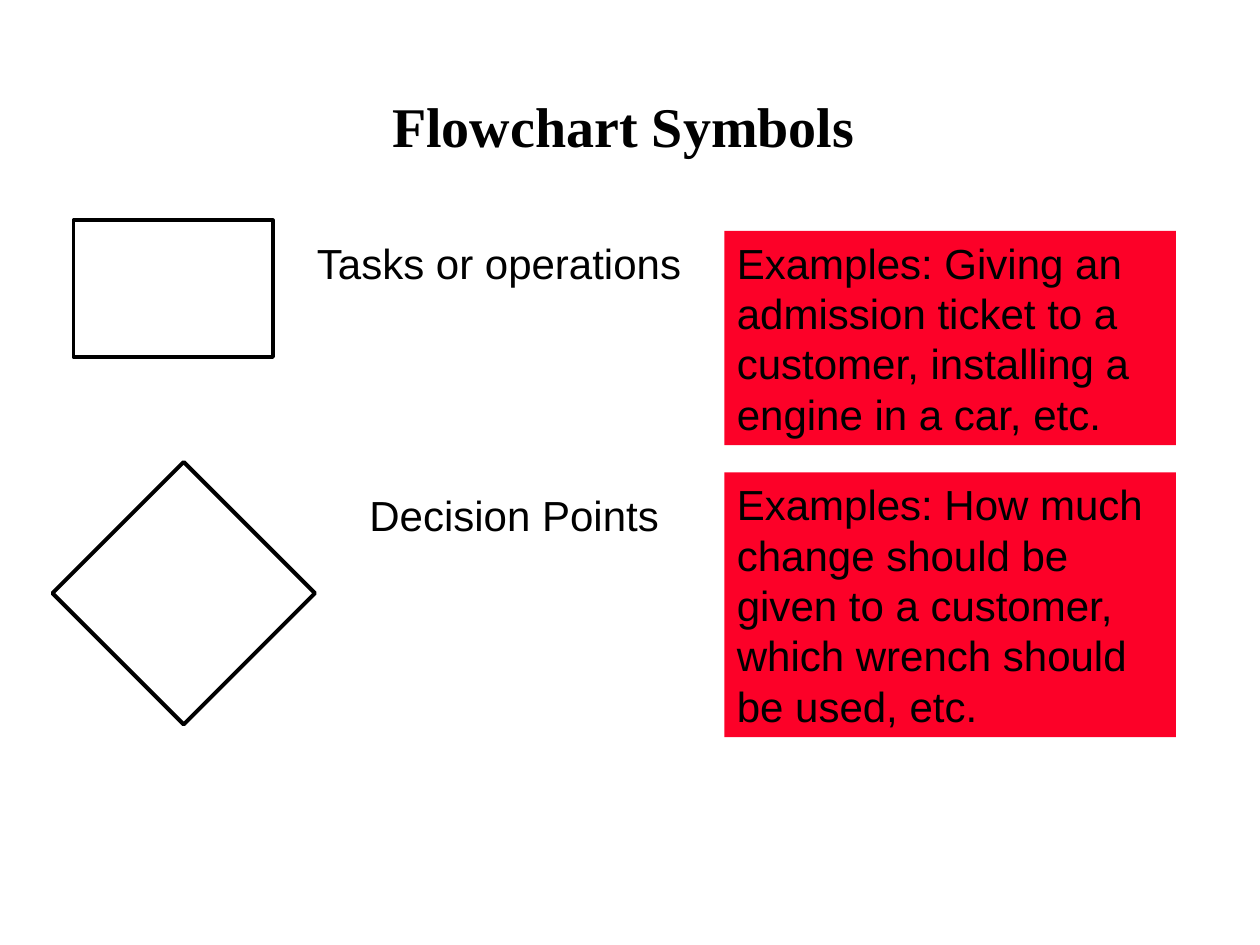
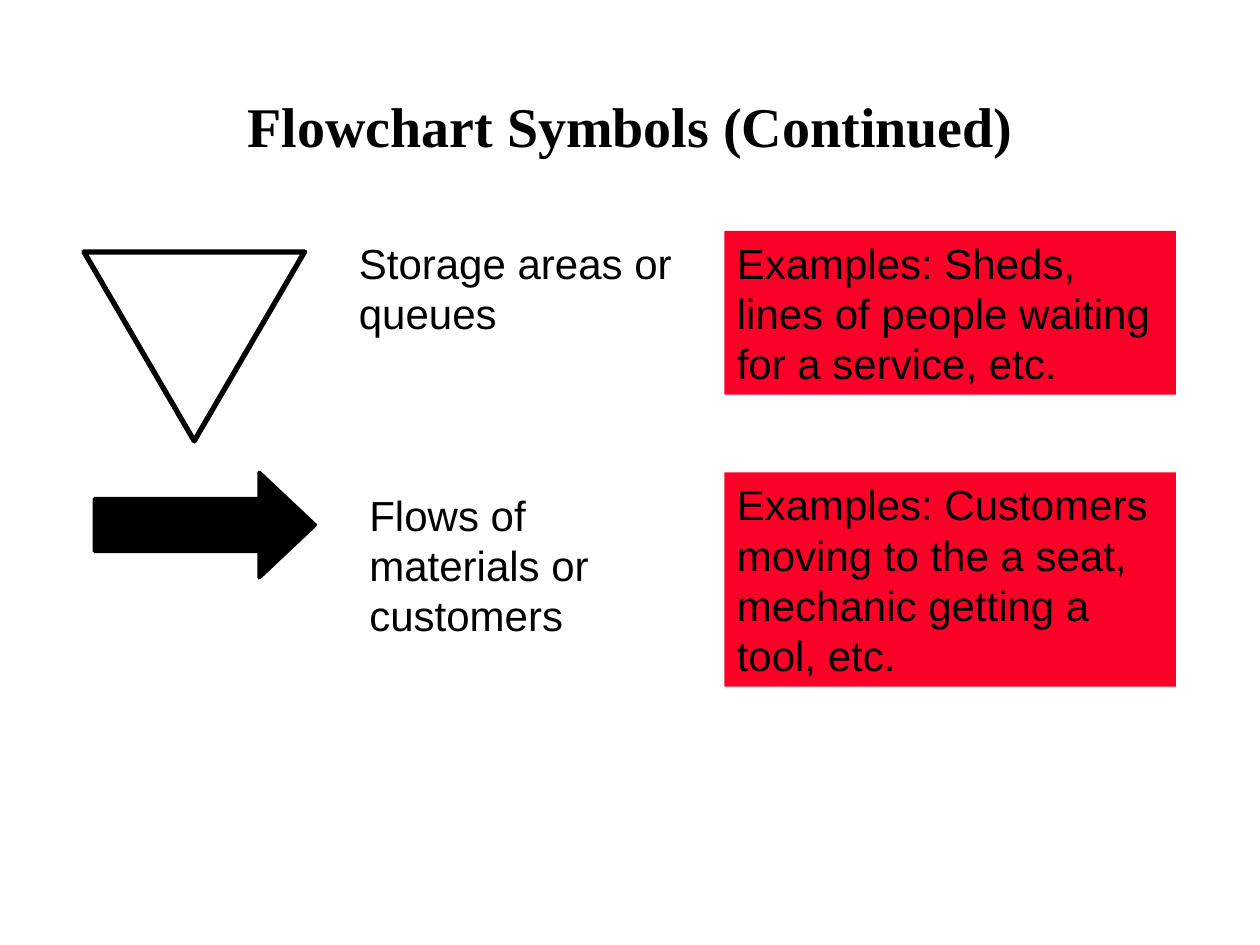
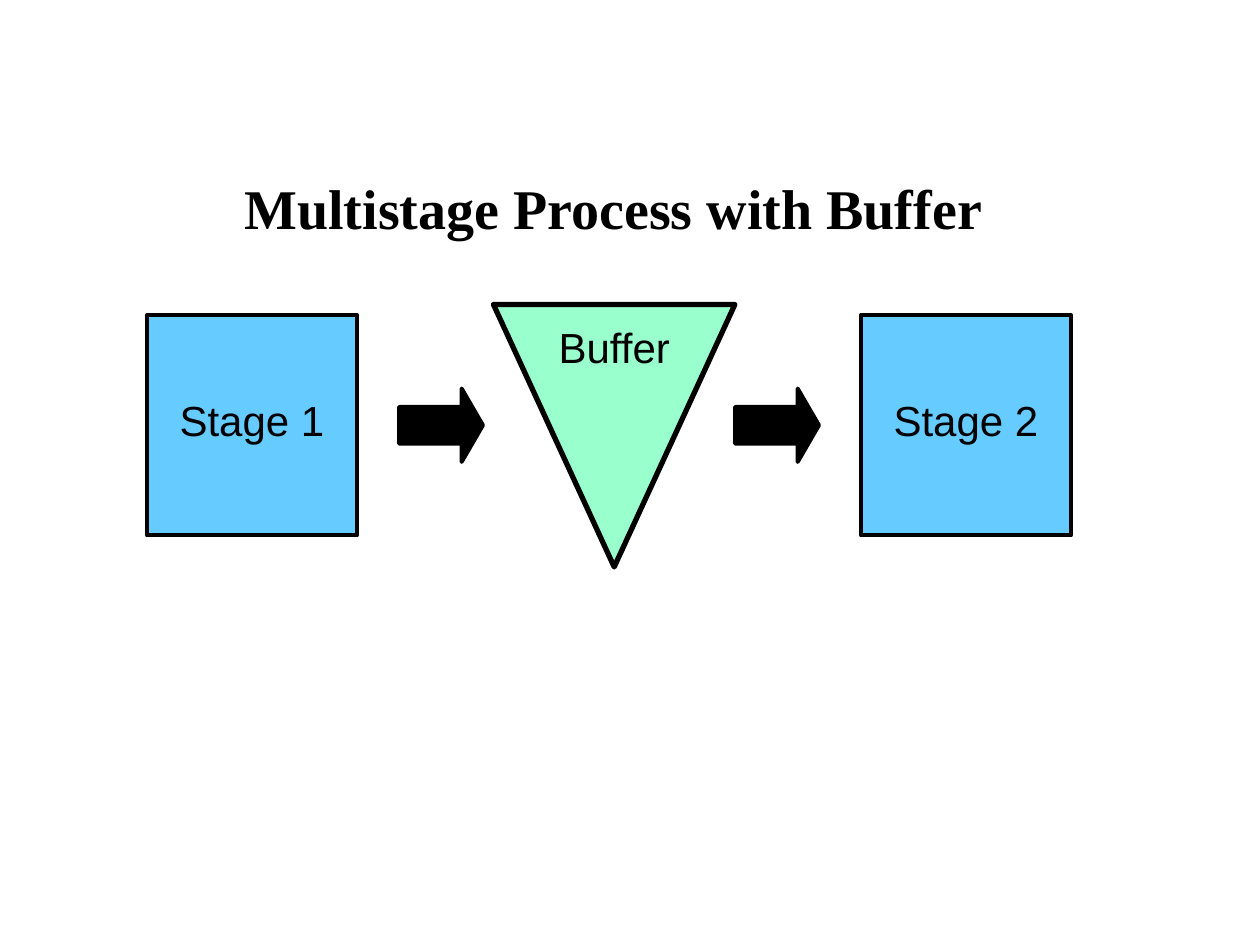
from dataclasses import dataclass
from typing import Any, Optional

from pptx import Presentation
from pptx.dml.color import RGBColor
from pptx.enum.shapes import MSO_SHAPE
from pptx.enum.text import MSO_ANCHOR, MSO_AUTO_SIZE, PP_ALIGN
from pptx.util import Inches, Pt

COLUMNS, ROWS = 120, 90
SLIDE_WIDTH, SLIDE_HEIGHT = Inches(10), Inches(7.5)
LINE_ROWS, PADDING_ROWS = 4.8, 1.2


@dataclass(frozen=True)
class Theme:
    ink: str = "000000"
    example: str = "FC0128"
    stage: str = "66CCFF"
    buffer: str = "99FFCC"
    title_font: str = "Times New Roman"
    body_font: str = "Arial"
    title_size: float = 32
    body_size: float = 24
    paragraph_gap: float = 15
    outline: float = 2.25
    heavy_outline: float = 3


THEME = Theme()


@dataclass(frozen=True)
class Area:
    column: float
    row: float
    columns: float
    rows: float

    def lengths(self) -> tuple[int, int, int, int]:
        cell_width, cell_height = SLIDE_WIDTH / COLUMNS, SLIDE_HEIGHT / ROWS
        return (
            round(self.column * cell_width),
            round(self.row * cell_height),
            round(self.columns * cell_width),
            round(self.rows * cell_height),
        )


@dataclass(frozen=True)
class Symbol:
    preset: MSO_SHAPE
    area: Area
    fill: Optional[str] = None
    outline: float = THEME.outline
    adjustments: tuple[float, ...] = ()


@dataclass(frozen=True)
class Caption:
    text: str
    column: float
    row: float
    columns: float
    lines: int = 1
    align: PP_ALIGN = PP_ALIGN.LEFT
    fill: Optional[str] = None

    def area(self) -> Area:
        rows = self.lines * LINE_ROWS + PADDING_ROWS
        return Area(self.column, self.row, self.columns, rows)


@dataclass(frozen=True)
class Page:
    title: str
    symbols: list[Symbol]
    captions: list[Caption]
    title_area: Area = Area(2.4, 7, 115.3, 9.8)


def example(text: str, row: float, lines: int) -> Caption:
    return Caption(text, 69, row, 43, lines, fill=THEME.example)


def apply(target: Any, values: dict[str, Any]) -> None:
    for attribute, value in values.items():
        setattr(target, attribute, value)


def paint(shape: Any, fill: Optional[str]) -> None:
    if fill is None:
        shape.fill.background()
    else:
        shape.fill.solid()
        shape.fill.fore_color.rgb = RGBColor.from_string(fill)


def write(shape: Any, text: str, frame: dict[str, Any],
          paragraph: dict[str, Any], font: dict[str, Any]) -> None:
    apply(shape.text_frame, {"word_wrap": True, **frame})
    line = shape.text_frame.paragraphs[0]
    apply(line, paragraph)
    run = line.add_run()
    run.text = text
    apply(run.font, font)
    run.font.color.rgb = RGBColor.from_string(THEME.ink)


def draw_title(slide: Any, text: str, area: Area) -> None:
    write(
        slide.shapes.add_textbox(*area.lengths()), text,
        {"vertical_anchor": MSO_ANCHOR.MIDDLE},
        {"alignment": PP_ALIGN.CENTER},
        {"name": THEME.title_font, "size": Pt(THEME.title_size), "bold": True},
    )


def draw_symbol(slide: Any, symbol: Symbol) -> None:
    shape = slide.shapes.add_shape(symbol.preset, *symbol.area.lengths())
    shape.shadow.inherit = False
    for index, value in enumerate(symbol.adjustments):
        shape.adjustments[index] = value
    paint(shape, symbol.fill)
    shape.line.color.rgb = RGBColor.from_string(THEME.ink)
    shape.line.width = Pt(symbol.outline)


def draw_caption(slide: Any, caption: Caption) -> None:
    box = slide.shapes.add_textbox(*caption.area().lengths())
    paint(box, caption.fill)
    write(
        box, caption.text,
        {"vertical_anchor": MSO_ANCHOR.TOP,
         "auto_size": MSO_AUTO_SIZE.SHAPE_TO_FIT_TEXT},
        {"alignment": caption.align, "space_before": Pt(THEME.paragraph_gap)},
        {"name": THEME.body_font, "size": Pt(THEME.body_size)},
    )


def symbols_page() -> Page:
    return Page(
        "Flowchart Symbols ",
        [
            Symbol(MSO_SHAPE.RECTANGLE, Area(7, 21, 19, 13)),
            Symbol(MSO_SHAPE.FLOWCHART_DECISION, Area(5, 44, 25, 25)),
        ],
        [
            Caption("Tasks or operations", 29, 22, 39),
            example("Examples: Giving an admission ticket to a customer, "
                    "installing a engine in a car, etc.", 22, 4),
            Caption("Decision Points", 34, 46, 31),
            example("Examples: How much change should be given to a customer, "
                    "which wrench should be used, etc.", 45, 5),
        ],
    )


def continued_page() -> Page:
    return Page(
        "Flowchart Symbols (Continued)",
        [
            Symbol(MSO_SHAPE.FLOWCHART_MERGE, Area(8, 24, 21, 18),
                   outline=THEME.heavy_outline),
            Symbol(MSO_SHAPE.RIGHT_ARROW, Area(9, 45, 21, 10), THEME.ink,
                   adjustments=(0.5, 0.53)),
        ],
        [
            Caption("Storage areas or queues", 33, 22, 33, 2),
            example("Examples: Sheds, lines of people waiting "
                    "for a service, etc.", 22, 3),
            Caption("Flows of materials or customers", 34, 46, 31, 3),
            example("Examples: Customers moving to the a seat, "
                    "mechanic getting a tool, etc.", 45, 4),
        ],
    )


def buffer_page() -> Page:
    stages = {"Stage 1": 14, "Stage 2": 82}
    flow_columns = (38, 70)
    return Page(
        "Multistage Process with Buffer",
        [
            *(Symbol(MSO_SHAPE.RIGHT_ARROW, Area(column, 37, 8, 7), THEME.ink,
                     adjustments=(0.5, 0.29)) for column in flow_columns),
            *(Symbol(MSO_SHAPE.RECTANGLE, Area(column, 30, 20, 21), THEME.stage)
              for column in stages.values()),
            Symbol(MSO_SHAPE.FLOWCHART_MERGE, Area(47, 29, 23, 25),
                   THEME.buffer, THEME.heavy_outline),
        ],
        [
            *(Caption(stage, column, 37, 20, align=PP_ALIGN.CENTER)
              for stage, column in stages.items()),
            Caption("Buffer", 48, 30, 21, align=PP_ALIGN.CENTER),
        ],
        Area(0.8, 14.8, 115.3, 9.8),
    )


def main() -> None:
    deck = Presentation()
    apply(deck, {"slide_width": SLIDE_WIDTH, "slide_height": SLIDE_HEIGHT})
    for page in (symbols_page(), continued_page(), buffer_page()):
        slide = deck.slides.add_slide(deck.slide_layouts[6])
        draw_title(slide, page.title, page.title_area)
        for symbol in page.symbols:
            draw_symbol(slide, symbol)
        for caption in page.captions:
            draw_caption(slide, caption)
    deck.save("out.pptx")


if __name__ == "__main__":
    main()
